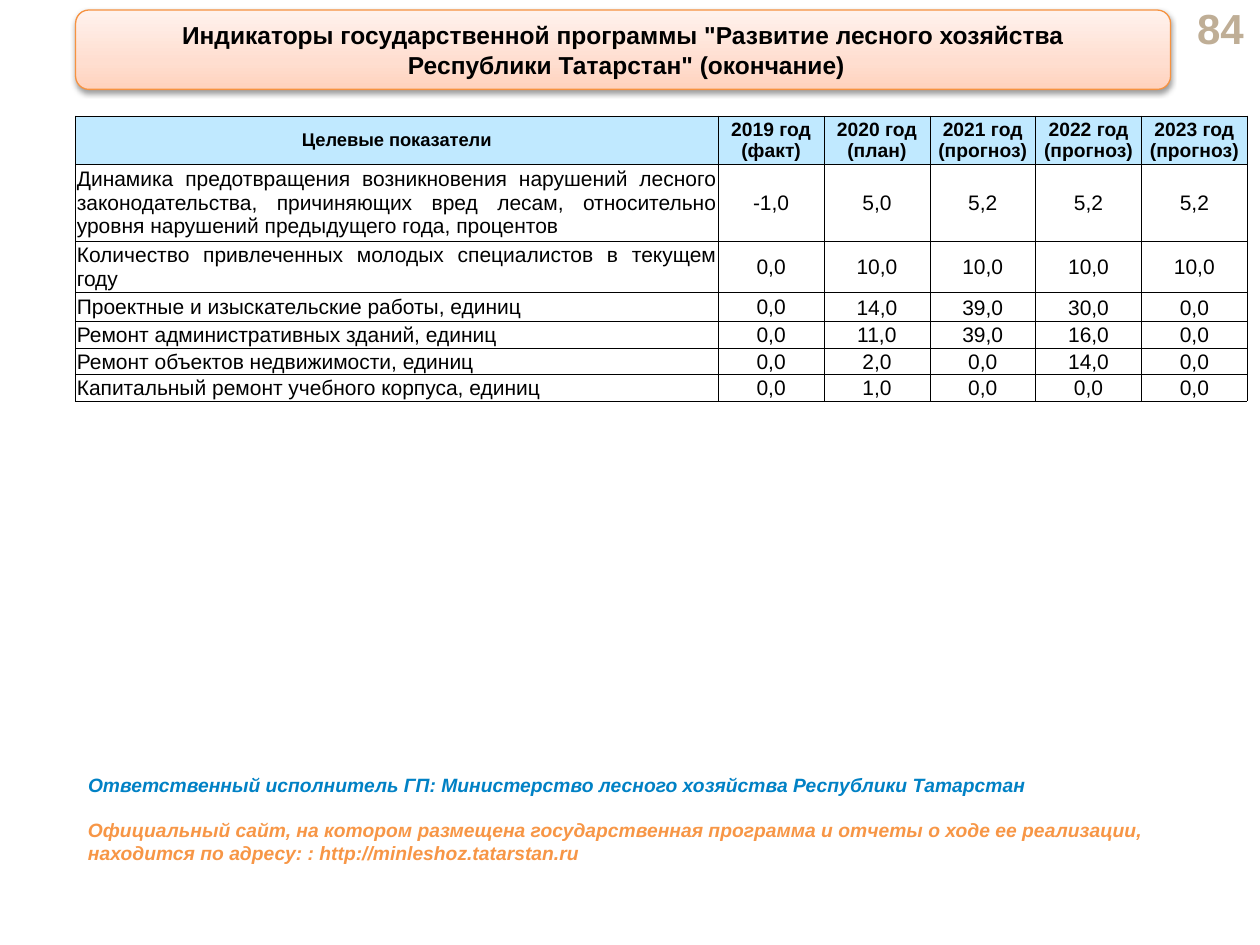
from dataclasses import dataclass

from lxml.etree import SubElement
from pptx import Presentation
from pptx.dml.color import RGBColor
from pptx.enum.shapes import MSO_SHAPE
from pptx.enum.text import MSO_ANCHOR, PP_ALIGN
from pptx.oxml.ns import qn
from pptx.util import Inches, Pt


@dataclass(frozen=True)
class Theme:
    font: str = "Arial"
    black: str = "000000"
    white: str = "FFFFFF"
    head: str = "C0E9FF"
    edge: str = "F69240"
    blue: str = "0081C5"
    orange: str = "F79646"
    tan: str = "BFAE96"
    glow: tuple = ((0, "FFD2BD"), (35, "FFDED0"), (100, "FFF2ED"))
    page: float = 24
    title: float = 14
    body: float = 12
    note: float = 11
    label: float = 10.5
    border: float = 0.25


class Deck:
    def __init__(self, theme, slide):
        self.theme = theme
        self.slide = slide

    def style(self, par, size, color, bold=False, italic=False, align=PP_ALIGN.LEFT):
        par.alignment = align
        for run in par.runs:
            font = run.font
            font.name = self.theme.font
            font.size = Pt(size)
            font.bold = bold
            font.italic = italic
            font.color.rgb = RGBColor.from_string(color)

    def text(self, box, words, size, color, **look):
        frame = self.slide.shapes.add_textbox(*map(Inches, box)).text_frame
        frame.word_wrap = True
        frame.vertical_anchor = MSO_ANCHOR.MIDDLE
        frame.text = words
        self.style(frame.paragraphs[0], size, color, bold=True, **look)

    def banner(self, box, words):
        shape = self.slide.shapes.add_shape(
            MSO_SHAPE.ROUNDED_RECTANGLE, *map(Inches, box))
        shape.line.color.rgb = RGBColor.from_string(self.theme.edge)
        shape.line.width = Pt(0.75)
        shape.fill.gradient()
        shape.fill.gradient_angle = 90
        props = shape.fill._xPr
        stops = props.find(qn("a:gradFill")).find(qn("a:gsLst"))
        for stop in list(stops):
            stops.remove(stop)
        for place, color in self.theme.glow:
            stop = SubElement(stops, qn("a:gs"), pos=str(place * 1000))
            SubElement(stop, qn("a:srgbClr"), val=color)
        shape.shadow.inherit = False
        shade = SubElement(
            props.find(qn("a:effectLst")), qn("a:outerShdw"),
            blurRad=str(Pt(3.1)), dist=str(Pt(1.6)), dir="5400000", rotWithShape="0")
        tone = SubElement(shade, qn("a:srgbClr"), val=self.theme.black)
        SubElement(tone, qn("a:alpha"), val="38000")
        frame = shape.text_frame
        frame.word_wrap = True
        frame.vertical_anchor = MSO_ANCHOR.MIDDLE
        frame.text = words
        for par in frame.paragraphs:
            self.style(par, self.theme.title, self.theme.black,
                       bold=True, align=PP_ALIGN.CENTER)

    def border(self, cell):
        props = cell._tc.get_or_add_tcPr()
        for side in ("a:lnL", "a:lnR", "a:lnT", "a:lnB"):
            line = SubElement(props, qn(side), w=str(Pt(self.theme.border)))
            fill = SubElement(line, qn("a:solidFill"))
            SubElement(fill, qn("a:srgbClr"), val=self.theme.black)

    def cell(self, cell, words, size, fill, bold, align):
        self.border(cell)
        cell.fill.solid()
        cell.fill.fore_color.rgb = RGBColor.from_string(fill)
        cell.vertical_anchor = MSO_ANCHOR.MIDDLE
        cell.margin_left = cell.margin_right = cell.margin_top = Inches(0.01)
        cell.margin_bottom = 0
        cell.text_frame.text = words
        self.style(cell.text_frame.paragraphs[0], size, self.theme.black,
                   bold=bold, align=align)

    def table(self, left, top, wides, talls, rows):
        box = (left, top, sum(wides), sum(talls))
        grid = self.slide.shapes.add_table(
            len(rows), len(wides), *map(Inches, box)).table
        grid.first_row = grid.horz_banding = False
        for col, wide in zip(grid.columns, wides):
            col.width = Inches(wide)
        for row, tall in zip(grid.rows, talls):
            row.height = Inches(tall)
        look = self.theme
        for r, row in enumerate(rows):
            for c, words in enumerate(row):
                if r == 0:
                    size = look.note if c else look.label
                    fill, align = look.head, PP_ALIGN.CENTER
                else:
                    size, fill = look.body, look.white
                    align = PP_ALIGN.CENTER if c else PP_ALIGN.JUSTIFY
                self.cell(grid.cell(r, c), words, size, fill, r == 0, align)
        return grid

    def loosen(self, cells):
        for cell in cells:
            cell.margin_left = cell.margin_right = Inches(0.07)
            cell.margin_top = 0
            cell.text_frame.paragraphs[0].line_spacing = 1.15


YEARS = (("2019", "факт"), ("2020", "план"), ("2021", "прогноз"),
         ("2022", "прогноз"), ("2023", "прогноз"))
ROWS = [
    ["Целевые показатели"] + [f"{year} год ({kind})" for year, kind in YEARS],
    ["Динамика предотвращения возникновения нарушений лесного законодательства, "
     "причиняющих вред лесам, относительно уровня нарушений предыдущего года, процентов",
     "-1,0", "5,0", "5,2", "5,2", "5,2"],
    ["Количество привлеченных молодых специалистов в текущем году",
     "0,0", "10,0", "10,0", "10,0", "10,0"],
    ["Проектные и изыскательские работы, единиц", "0,0", "14,0", "39,0", "30,0", "0,0"],
    ["Ремонт административных зданий, единиц", "0,0", "11,0", "39,0", "16,0", "0,0"],
    ["Ремонт объектов недвижимости, единиц", "0,0", "2,0", "0,0", "14,0", "0,0"],
    ["Капитальный ремонт учебного корпуса, единиц", "0,0", "1,0", "0,0", "0,0", "0,0"],
]


def main():
    show = Presentation()
    show.slide_width, show.slide_height = Inches(10), Inches(7.5)
    theme = Theme()
    deck = Deck(theme, show.slides.add_slide(show.slide_layouts[6]))
    left = 0.6

    deck.text((9.11, 0.05, 0.86, 0.34), "84", theme.page, theme.tan,
              align=PP_ALIGN.RIGHT)
    grid = deck.table(left, 0.92, [5.1] + [0.84] * len(YEARS),
                      [0.38, 0.61, 0.41, 0.23, 0.21, 0.21, 0.21], ROWS)
    deck.loosen(grid.cell(3, c) for c in range(2, 6))
    deck.banner((left, 0.08, 8.69, 0.63),
                'Индикаторы государственной программы "Развитие лесного хозяйства\n'
                ' Республики Татарстан" (окончание)')
    deck.text((left, 6.08, 9.15, 0.29),
              "Ответственный исполнитель ГП: Министерство лесного хозяйства "
              "Республики Татарстан", theme.note, theme.blue, italic=True)
    deck.text((left, 6.44, 8.73, 0.47),
              "Официальный сайт, на котором размещена государственная программа и отчеты "
              "о ходе ее реализации, находится по адресу: : http://minleshoz.tatarstan.ru",
              theme.note, theme.orange, italic=True)
    show.save("out.pptx")


if __name__ == "__main__":
    main()
